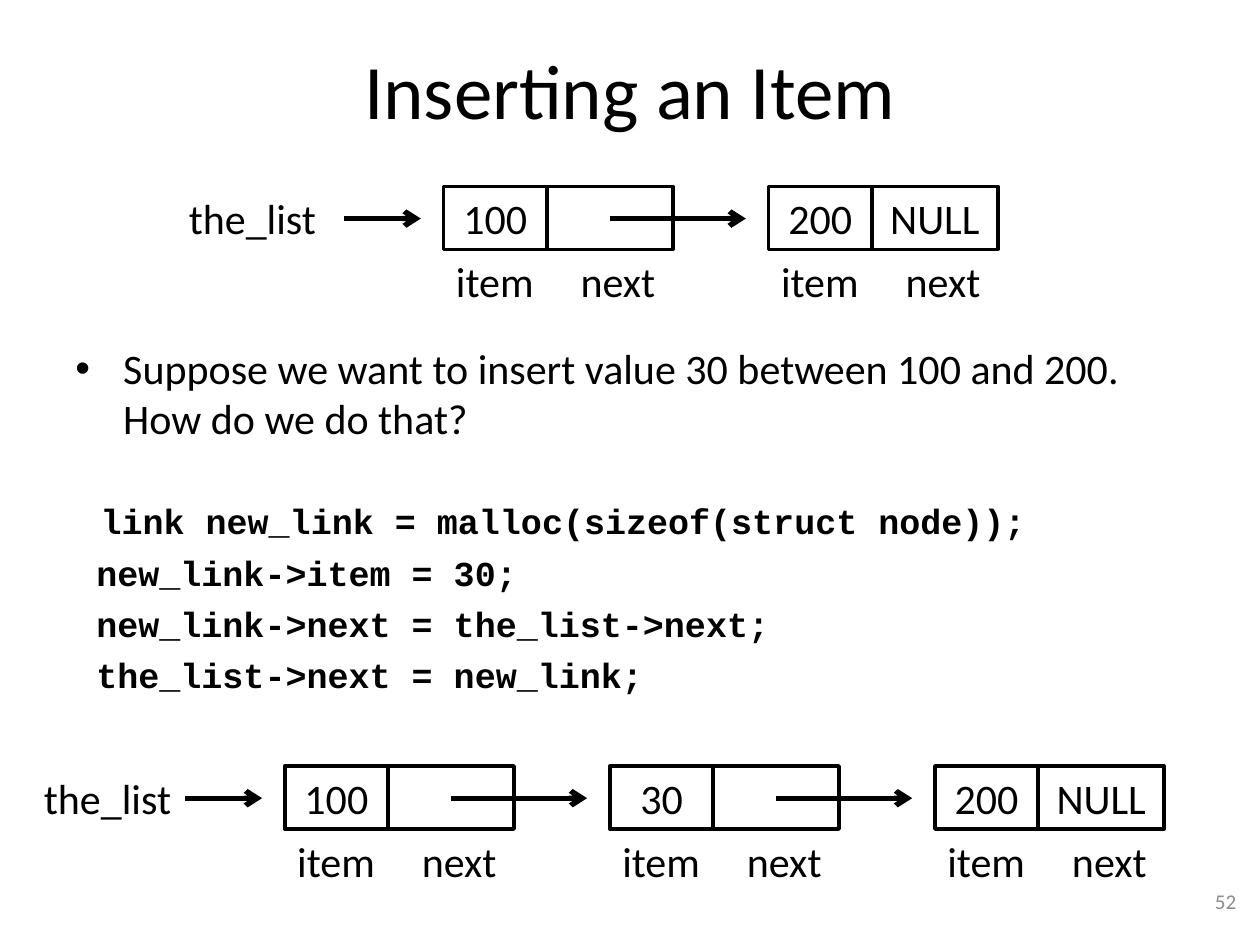
from dataclasses import dataclass

from lxml import etree
from pptx import Presentation
from pptx.dml.color import RGBColor
from pptx.enum.shapes import MSO_CONNECTOR, MSO_SHAPE
from pptx.enum.text import MSO_ANCHOR, PP_ALIGN
from pptx.oxml.ns import qn
from pptx.util import Inches, Pt

LEFT, MID, RIGHT = PP_ALIGN.LEFT, PP_ALIGN.CENTER, PP_ALIGN.RIGHT
TOP, CENTER = MSO_ANCHOR.TOP, MSO_ANCHOR.MIDDLE
RECT, LINE = MSO_SHAPE.RECTANGLE, MSO_CONNECTOR.STRAIGHT
INK = {"main": "000000", "page": "8C8C8C"}
SANS, MONO = "Calibri", "Courier New"

# Grid: 10 columns by 15 rows
WIDE, HIGH = Inches(10), Inches(7.5)
COLS, ROWS = 10, 15

# Node measures, in columns
ITEM, NEXT = 0.82, 1.0   # cell widths
STEP = 2.58              # from one node to the next
GAP = 0.18               # arrow tip to node


@dataclass
class Chain:
    row: float
    start: float   # column of the first node
    label: float   # column of the list name
    items: list[str]


CHAINS = [
    Chain(2.96, 3.52, 1.4, ["100", "200"]),
    Chain(12.16, 2.26, 0.25, ["100", "30", "200"]),
]

CODE = [
    "link new_link = malloc(sizeof(struct node));",
    " new_link->item = 30;",
    " new_link->next = the_list->next;",
    " the_list->next = new_link;",
]


def col(n: float) -> int:
    return round(WIDE * n / COLS)


def row(n: float) -> int:
    return round(HIGH * n / ROWS)


def box(x: float, y: float, w: float, h: float) -> tuple[int, int, int, int]:
    return col(x), row(y), col(w), row(h)


def write(par, text: str, size: float = 24, font: str = SANS, bold: bool = False,
          ink: str = "main", align=LEFT, before: float = 0) -> None:
    """Add one formatted run to a paragraph."""
    par.alignment, par.space_before = align, Pt(before)
    run = par.add_run()
    run.text = text
    run.font.size, run.font.name, run.font.bold = Pt(size), font, bold
    run.font.color.rgb = RGBColor.from_string(INK[ink])


def frame(slide, area: tuple, wrap: bool = True, anchor=TOP):
    text = slide.shapes.add_textbox(*area).text_frame
    text.word_wrap, text.vertical_anchor = wrap, anchor
    return text


def label(slide, text: str, x: float, y: float, w: float) -> None:
    write(frame(slide, box(x, y, w, 1), wrap=False).paragraphs[0], text)


def cell(slide, text: str, x: float, y: float, w: float) -> None:
    shape = slide.shapes.add_shape(RECT, *box(x, y, w, 1))
    shape.shadow.inherit = False
    shape.fill.background()
    shape.line.color.rgb = RGBColor.from_string(INK["main"])
    shape.line.width = Pt(2)
    if text:
        write(shape.text_frame.paragraphs[0], text, align=MID)


def arrow(slide, x: float, end: float, y: float) -> None:
    line = slide.shapes.add_connector(LINE, col(x), row(y), col(end), row(y))
    line.line.color.rgb = RGBColor.from_string(INK["main"])
    line.line.width = Pt(3)
    props = line.line._get_or_add_ln()
    etree.SubElement(props, qn("a:tailEnd"), type="arrow")
    etree.SubElement(line._element.spPr, qn("a:effectLst"))


def draw(slide, chain: Chain) -> None:
    """Draw a linked list with its name, nodes and arrows."""
    y, mid = chain.row, chain.row + 0.51
    label(slide, "the_list", chain.label, y, 1.22)
    arrow(slide, chain.start - 0.79, chain.start - GAP, mid)
    last = len(chain.items) - 1
    for i, item in enumerate(chain.items):
        x = chain.start + i * STEP
        cell(slide, item, x, y, ITEM)
        cell(slide, "NULL" if i == last else "", x + ITEM, y, NEXT)
        label(slide, "item", x, y + 1, ITEM)
        label(slide, "next", x + 0.99, y + 1, 0.8)
        if i < last:
            arrow(slide, x + ITEM + NEXT / 2, x + STEP - GAP, mid)


def bullet(par) -> None:
    props = par._p.get_or_add_pPr()
    props.set("marL", str(Inches(0.38)))
    props.set("indent", str(-Inches(0.38)))
    etree.SubElement(props, qn("a:buFont"), typeface="Arial")
    etree.SubElement(props, qn("a:buChar"), char="•")


def main() -> None:
    deck = Presentation()
    deck.slide_width, deck.slide_height = WIDE, HIGH
    slide = deck.slides.add_slide(deck.slide_layouts[5])

    # Title
    head = slide.shapes.title
    head.left, head.top, head.width, head.height = box(0.5, 0.16, 9, 2.5)
    head.text_frame.vertical_anchor = CENTER
    write(head.text_frame.paragraphs[0], "Inserting an Item", size=44, align=MID)

    # Question and code
    body = frame(slide, box(0.5, 5.34, 9, 8.34))
    ask = body.paragraphs[0]
    write(ask, "Suppose we want to insert value 30 between 100 and 200. "
               "How do we do that?")
    bullet(ask)
    for i, text in enumerate(CODE):
        par = body.add_paragraph()
        before = 5 if i else 28
        if i == 0:
            write(par, " ", font=MONO, bold=True)
        write(par, text, size=20, font=MONO, bold=True, before=before)

    # Lists before and after
    for chain in CHAINS:
        draw(slide, chain)

    # Page number
    page = frame(slide, box(7.58, 13.9, 2.33, 0.8), anchor=CENTER)
    write(page.paragraphs[0], "52", size=12, ink="page", align=RIGHT)

    deck.save("out.pptx")


if __name__ == "__main__":
    main()
